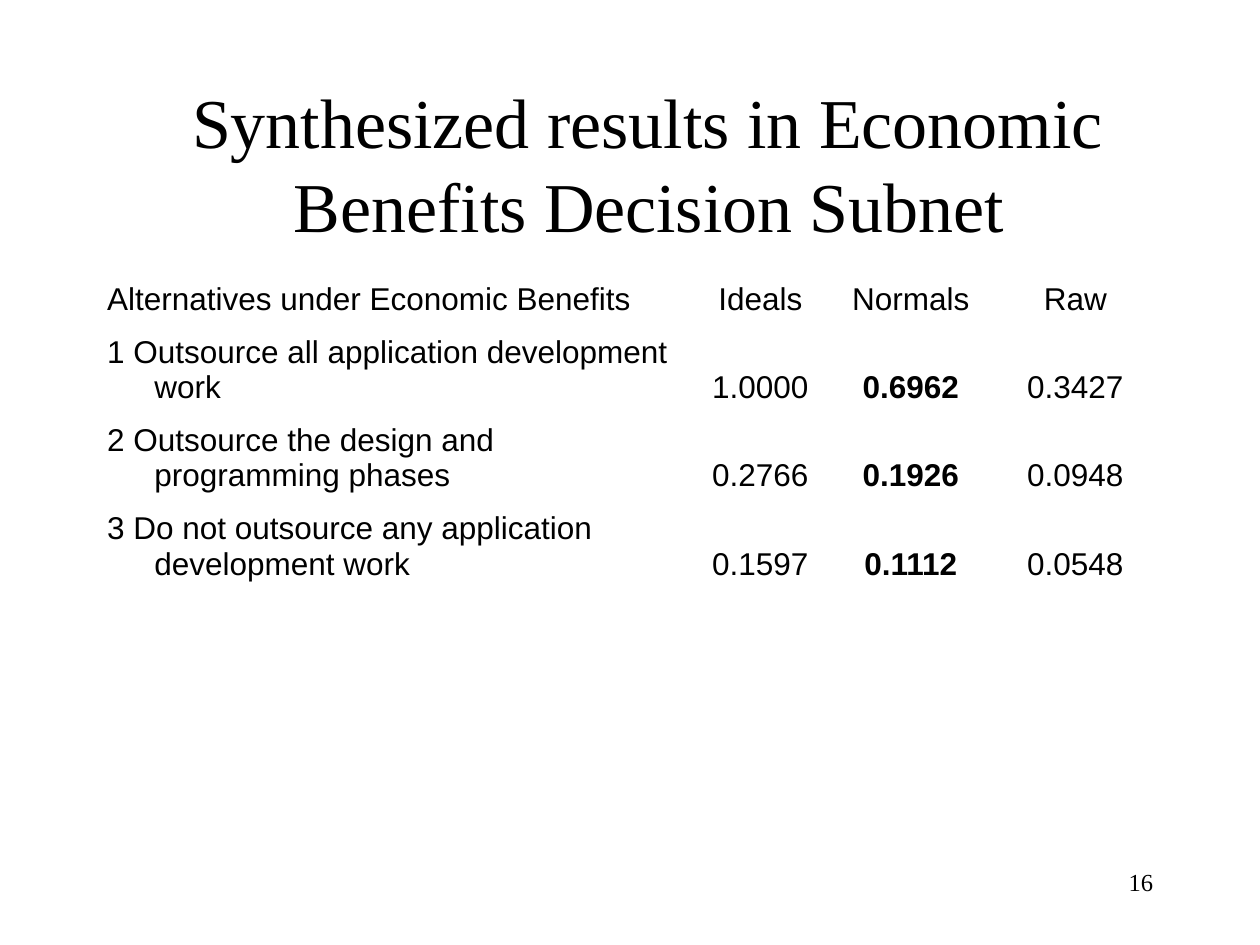
import pptx
import pptx.util
import pptx.dml.color
import pptx.enum.text

Pt = pptx.util.Pt
ALIGN = pptx.enum.text.PP_ALIGN
ANCHOR = pptx.enum.text.MSO_ANCHOR

DATA = [
    ["Alternatives under Economic Benefits", "Ideals", "Normals", "Raw"],
    ["1 Outsource all application development work", "1.0000", "0.6962", "0.3427"],
    ["2 Outsource the design and programming phases", "0.2766", "0.1926", "0.0948"],
    ["3 Do not outsource any application development work", "0.1597", "0.1112", "0.0548"],
]
WIDTHS = [337, 87, 85, 103]
HEIGHTS = [28.8] + [50.2] * 3 + [43.2] + [36] * 4 + [41] + [36] * 5


def color(code):
    """Return the colour for a hex string."""
    return pptx.dml.color.RGBColor.from_string(code)


def style(para, face, size, align, bold=False):
    """Set the font and alignment of a paragraph."""
    para.alignment = align
    para.font.name = face
    para.font.size = Pt(size)
    para.font.bold = bold
    para.font.color.rgb = color("000000")


def title(slide, box):
    """Place the two-line slide title in the box."""
    shape = slide.shapes.title
    shape.left, shape.top, shape.width, shape.height = map(Pt, box)
    frame = shape.text_frame
    frame.text = "Synthesized results in Economic \vBenefits Decision Subnet"
    frame.vertical_anchor = ANCHOR.MIDDLE
    frame.auto_size = pptx.enum.text.MSO_AUTO_SIZE.NONE
    para = frame.paragraphs[0]
    style(para, "Times New Roman", 40, ALIGN.CENTER)
    tail = para.add_run()
    tail.text = " "
    tail.font.size = Pt(32)


def fill(cell, text, align, bold):
    """Write text with a hanging indent into a table cell."""
    cell.text = text
    cell.vertical_anchor = ANCHOR.BOTTOM
    para = cell.text_frame.paragraphs[0]
    style(para, "Arial", 18, align, bold)
    props = para._p.get_or_add_pPr()
    props.set("marL", str(Pt(27)))
    props.set("indent", str(Pt(-27)))


def results(slide, box):
    """Place the table of synthesized results in the box."""
    frame = slide.shapes.add_table(len(HEIGHTS), len(WIDTHS), *map(Pt, box))
    table = frame.table
    table.first_row = table.horz_banding = False
    for col, width in zip(table.columns, WIDTHS):
        col.width = Pt(width)
    for row, height in zip(table.rows, HEIGHTS):
        row.height = Pt(height)
    for cell in table.iter_cells():
        cell.fill.background()
    for r, texts in enumerate(DATA):
        for c, text in enumerate(texts):
            align = ALIGN.CENTER if c else ALIGN.LEFT
            fill(table.cell(r, c), text, align, bold=r > 0 and c == 2)


def number(slide, box):
    """Place the page number in the box."""
    frame = slide.shapes.add_textbox(*map(Pt, box)).text_frame
    frame.word_wrap = True
    frame.text = "16"
    style(frame.paragraphs[0], "Times New Roman", 14, ALIGN.RIGHT)


def main():
    """Build and save the slide."""
    deck = pptx.Presentation()
    deck.slide_width, deck.slide_height = Pt(720), Pt(540)
    slide = deck.slides.add_slide(deck.slide_layouts[5])
    slide.background.fill.solid()
    slide.background.fill.fore_color.rgb = color("FFFFFF")
    number(slide, (516, 492, 150, 36))
    title(slide, (54, 48, 642, 90))
    results(slide, (54, 156, sum(WIDTHS), sum(HEIGHTS)))
    deck.save("out.pptx")


if __name__ == "__main__":
    main()
